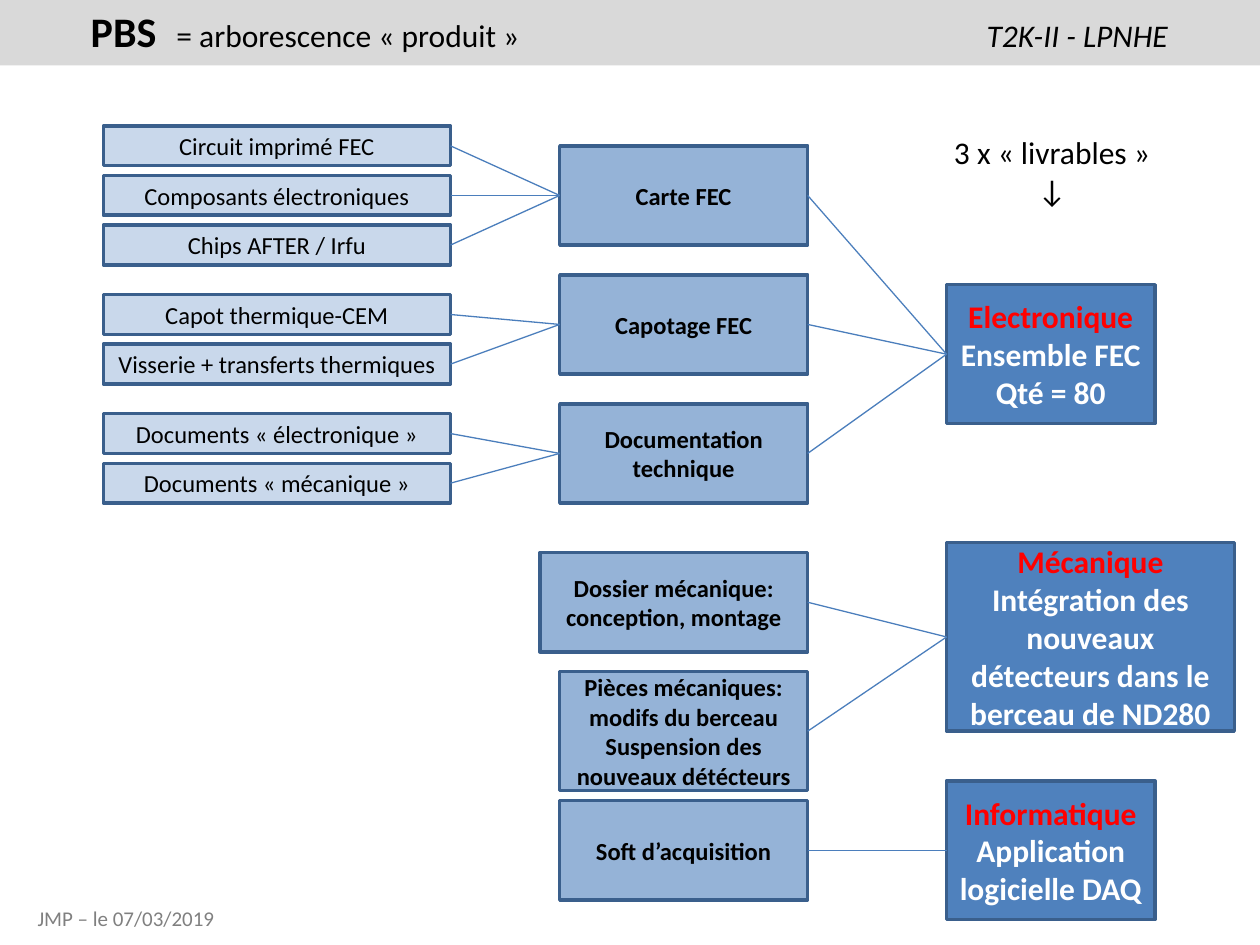
from lxml import etree
from pptx import Presentation
from pptx import util as u
from pptx.dml.color import RGBColor
from pptx.enum import shapes, text
from pptx.oxml.ns import qn

BLACK = RGBColor(0, 0, 0)
WHITE = RGBColor(255, 255, 255)
RED = RGBColor(255, 0, 0)
GREY = RGBColor(0x80, 0x80, 0x80)
BAND = RGBColor(0xD9, 0xD9, 0xD9)
BLUE = RGBColor(0x4F, 0x81, 0xBD)
EDGE = RGBColor(0x3A, 0x5F, 0x8C)
LINK = RGBColor(0x4B, 0x7E, 0xBC)

STEP = u.Mm(2)
LEFT = u.Inches(0.82)
TOP = u.Inches(1)

LEAF = dict(alpha=30)
PART = dict(alpha=60, bold=True)
GOAL = dict(size=18, bold=True, tint=WHITE, head=RED)

TREE = [
    ((85, 16, 21, 14), "Electronique\nEnsemble FEC\nQté = 80", [
        ((46, 2, 25, 10), "Carte FEC",
         [(0, "Circuit imprimé FEC"), (5, "Composants électroniques"),
          (10, "Chips AFTER / Irfu")]),
        ((46, 15, 25, 10), "Capotage FEC",
         [(17, "Capot thermique-CEM"), (22, "Visserie + transferts thermiques")]),
        ((46, 28, 25, 10), "Documentation technique",
         [(29, "Documents « électronique »"), (34, "Documents « mécanique »")]),
    ]),
    ((85, 42, 29, 19),
     "Mécanique\nIntégration des nouveaux détecteurs dans le berceau de ND280", [
        ((44, 43, 27, 10), "Dossier mécanique: conception, montage", []),
        ((46, 55, 25, 12),
         "Pièces mécaniques: modifs du berceau\nSuspension des nouveaux détécteurs", []),
    ]),
    ((85, 66, 21, 14), "Informatique\nApplication logicielle DAQ", [
        ((46, 68, 25, 10), "Soft d’acquisition", []),
    ]),
]


def write(par, words, size=14, bold=False, ital=False, tint=BLACK):
    """Add a formatted run to a paragraph."""
    run = par.add_run()
    run.text = words
    font = run.font
    font.name, font.size = "Calibri", u.Pt(size)
    font.bold, font.italic = bold, ital
    font.color.rgb = tint


def fill_text(frame, words, align=text.PP_ALIGN.CENTER, head=None, **form):
    """Write one paragraph per line, with an optional colour for the first."""
    for num, line in enumerate(words.split("\n")):
        par = frame.add_paragraph() if num else frame.paragraphs[0]
        par.alignment = align
        look = dict(form, tint=head) if head and num == 0 else form
        write(par, line, **look)


def node(slide, cell, words, alpha=100, **form):
    """Draw a box on the grid cell (column, row, columns, rows)."""
    col, row, wide, high = cell
    box = slide.shapes.add_shape(
        shapes.MSO_SHAPE.FLOWCHART_PROCESS, LEFT + col * STEP, TOP + row * STEP,
        wide * STEP, high * STEP)
    box.shadow.inherit = False
    box.fill.solid()
    box.fill.fore_color.rgb = BLUE
    if alpha < 100:
        tone = box.fill._xPr.find(qn("a:solidFill"))[0]
        etree.SubElement(tone, qn("a:alpha"), val=str(alpha * 1000))
    box.line.color.rgb = EDGE
    box.line.width = u.Pt(2)
    frame = box.text_frame
    frame.word_wrap = True
    frame.vertical_anchor = text.MSO_ANCHOR.MIDDLE
    fill_text(frame, words, **form)
    return box


def link(slide, start, end):
    """Join the right side of one box to the left side of another."""
    line = slide.shapes.add_connector(shapes.MSO_CONNECTOR.STRAIGHT, 0, 0, 0, 0)
    line.begin_connect(start, 3)
    line.end_connect(end, 1)
    line.line.color.rgb = LINK
    line.line.width = u.Pt(0.75)
    etree.SubElement(line._element.spPr, qn("a:effectLst"))


def branch(slide, goal):
    """Draw a deliverable with its parts and their leaves."""
    cell, words, parts = goal
    root = node(slide, cell, words, **GOAL)
    for cell, words, leaves in parts:
        part = node(slide, cell, words, **PART)
        link(slide, part, root)
        for row, label in leaves:
            leaf = node(slide, (0, row, 35, 4), label, **LEAF)
            link(slide, leaf, part)


def banner(slide, left, top, wide, high):
    """Set the title band, with tab stops for its three pieces."""
    band = slide.shapes.title
    band.left, band.top, band.width, band.height = left, top, wide, high
    band.fill.solid()
    band.fill.fore_color.rgb = BAND
    frame = band.text_frame
    frame.auto_size = text.MSO_AUTO_SIZE.NONE
    frame.vertical_anchor = text.MSO_ANCHOR.MIDDLE
    frame.margin_left, frame.margin_right = int(wide * 0.072), 0
    par = frame.paragraphs[0]
    par.alignment = text.PP_ALIGN.LEFT
    tabs = etree.SubElement(par._p.get_or_add_pPr(), qn("a:tabLst"))
    for share, side in ((0.068, "l"), (0.855, "r")):
        etree.SubElement(tabs, qn("a:tab"), pos=str(int(wide * share)), algn=side)
    write(par, "PBS", size=24, bold=True)
    write(par, "\t= arborescence « produit »", size=18)
    write(par, "\tT2K-II - LPNHE", size=18, ital=True)


def note(slide, left, top, wide, high, words, wrap=True, **form):
    """Place a plain text box."""
    frame = slide.shapes.add_textbox(left, top, wide, high).text_frame
    frame.word_wrap = wrap
    fill_text(frame, words, **form)


def main():
    """Build the slide and save it."""
    deck = Presentation()
    deck.slide_width, deck.slide_height = u.Inches(10), u.Inches(7.5)
    slide = deck.slides.add_slide(deck.slide_layouts[5])
    banner(slide, 0, u.Inches(-0.03), deck.slide_width, u.Inches(0.55))
    for goal in TREE:
        branch(slide, goal)
    note(slide, u.Inches(0.2), u.Inches(7.14), u.Inches(1.73), u.Inches(0.3),
         "JMP – le 07/03/2019", align=text.PP_ALIGN.LEFT, size=12, tint=GREY)
    note(slide, u.Inches(7.46), u.Inches(1.01), u.Inches(1.78), u.Inches(0.71),
         "3 x « livrables »\n↓", wrap=False, size=18)
    deck.save("out.pptx")


if __name__ == "__main__":
    main()
